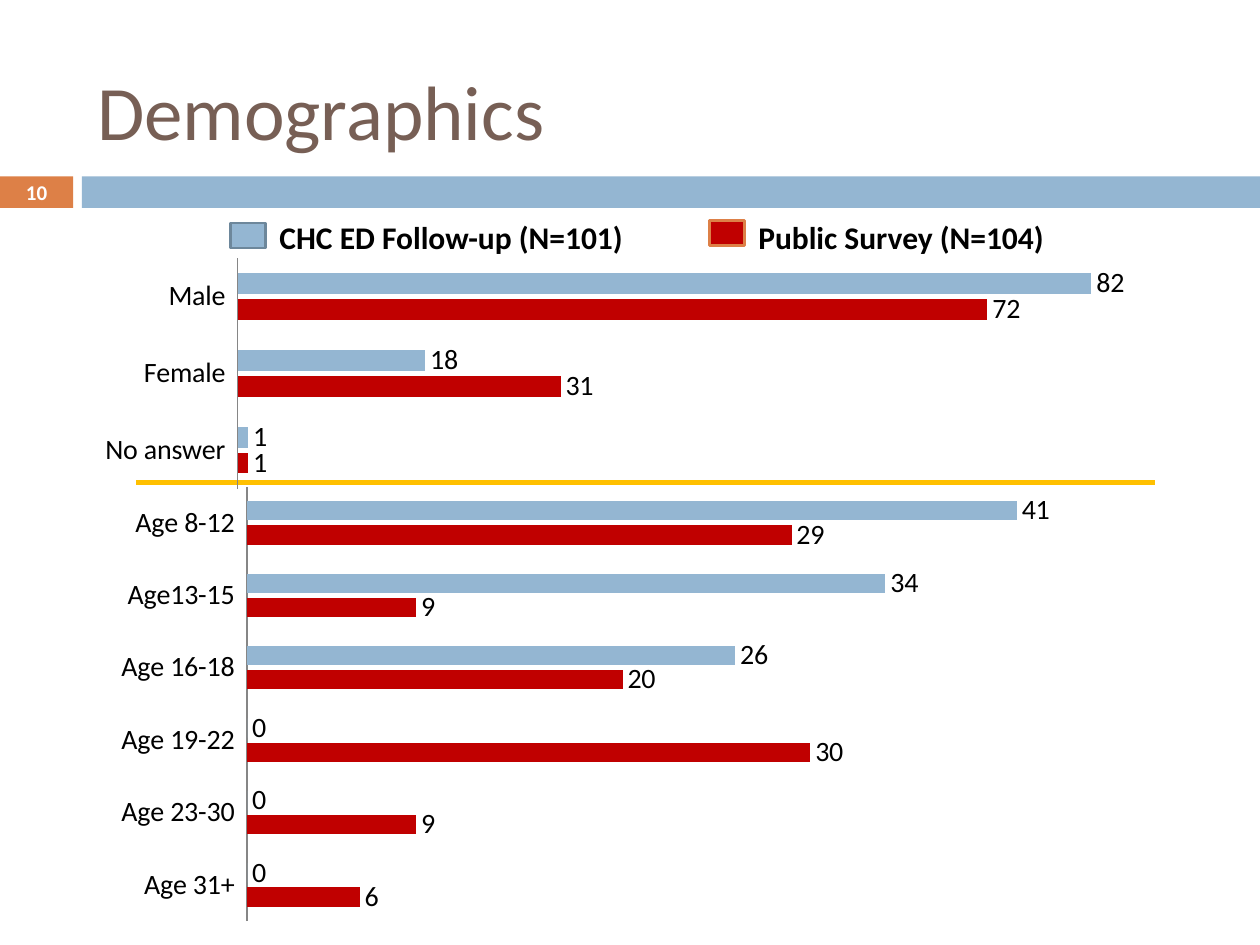
from lxml import etree
from pptx import Presentation
from pptx.chart.data import CategoryChartData
from pptx.dml.color import RGBColor
from pptx.enum.chart import XL_CHART_TYPE, XL_LABEL_POSITION, XL_TICK_LABEL_POSITION, XL_TICK_MARK
from pptx.enum.shapes import MSO_CONNECTOR, MSO_SHAPE
from pptx.enum.text import MSO_ANCHOR, PP_ALIGN
from pptx.oxml.ns import qn
from pptx.util import Inches, Pt

BAR_CLUSTERED = XL_CHART_TYPE.BAR_CLUSTERED
OUTSIDE_END = XL_LABEL_POSITION.OUTSIDE_END
LABELS_LOW = XL_TICK_LABEL_POSITION.LOW
NO_TICK = XL_TICK_MARK.NONE
STRAIGHT = MSO_CONNECTOR.STRAIGHT
RECTANGLE = MSO_SHAPE.RECTANGLE
MIDDLE = MSO_ANCHOR.MIDDLE
LEFT, CENTER = PP_ALIGN.LEFT, PP_ALIGN.CENTER

BLUE = RGBColor(0x94, 0xB6, 0xD2)
BLUE_EDGE = RGBColor(0x6D, 0x87, 0x9B)
RED = RGBColor(0xC0, 0x00, 0x00)
ORANGE = RGBColor(0xDD, 0x80, 0x47)
GOLD = RGBColor(0xFF, 0xC0, 0x00)
BROWN = RGBColor(0x77, 0x5F, 0x55)
GREY = RGBColor(0x86, 0x86, 0x86)
BLACK = RGBColor(0x00, 0x00, 0x00)
WHITE = RGBColor(0xFF, 0xFF, 0xFF)
FONT = "Calibri"
TITLE_ONLY = 5


def style_font(font, size, color, bold=False):
    font.name = FONT
    font.size = Pt(size)
    font.bold = bold
    font.color.rgb = color


def add_rectangle(slide, left, top, width, height, fill, edge=None):
    rectangle = slide.shapes.add_shape(
        RECTANGLE, Inches(left), Inches(top), Inches(width), Inches(height))
    rectangle.shadow.inherit = False
    rectangle.fill.solid()
    rectangle.fill.fore_color.rgb = fill
    if edge is None:
        rectangle.line.fill.background()
    else:
        rectangle.line.color.rgb = edge
        rectangle.line.width = Pt(1.5)
    return rectangle


def set_title(slide, text, left, top, width, height):
    title = slide.shapes.title
    title.left, title.top = Inches(left), Inches(top)
    title.width, title.height = Inches(width), Inches(height)
    frame = title.text_frame
    frame.text = text
    frame.vertical_anchor = MIDDLE
    frame.paragraphs[0].alignment = LEFT
    style_font(frame.paragraphs[0].runs[0].font, 44, BROWN)


def add_header_band(slide, number, top, height):
    """Draw the page number tab and the bar to its right."""
    tab = add_rectangle(slide, 0, top, 0.58, height, ORANGE)
    add_rectangle(slide, 0.65, top, 9.35, height, BLUE)
    frame = tab.text_frame
    frame.margin_top = frame.margin_bottom = 0
    frame.text = number
    frame.vertical_anchor = MIDDLE
    frame.paragraphs[0].alignment = CENTER
    style_font(frame.paragraphs[0].runs[0].font, 12, WHITE, bold=True)


def add_legend_entry(slide, text, left, top, swatch_top, fill, edge):
    add_rectangle(slide, left, swatch_top, 0.28, 0.2, fill, edge)
    label = slide.shapes.add_textbox(
        Inches(left + 0.29), Inches(top), Inches(3.5), Inches(0.4))
    frame = label.text_frame
    frame.word_wrap = True
    frame.text = text
    style_font(frame.paragraphs[0].runs[0].font, 18, BLACK, bold=True)


def add_divider(slide, left, right, y):
    divider = slide.shapes.add_connector(
        STRAIGHT, Inches(left), Inches(y), Inches(right), Inches(y))
    divider.line.color.rgb = GOLD
    divider.line.width = Pt(3)
    etree.SubElement(divider.element.spPr, qn("a:effectLst"))


def set_plot_layout(chart, x, y, w, h):
    """Fix the inner plot area, in fractions of the chart's size."""
    plot_area = chart.element.find(".//" + qn("c:plotArea"))
    for old_layout in plot_area.findall(qn("c:layout")):
        plot_area.remove(old_layout)
    layout = etree.Element(qn("c:layout"))
    manual = etree.SubElement(layout, qn("c:manualLayout"))
    settings = {"layoutTarget": "inner", "xMode": "edge", "yMode": "edge",
                "x": x, "y": y, "w": w, "h": h}
    for tag, value in settings.items():
        etree.SubElement(manual, qn("c:" + tag)).set("val", str(value))
    plot_area.insert(0, layout)


def add_survey_chart(slide, box, categories, follow_up, public, maximum, layout):
    data = CategoryChartData()
    data.categories = categories
    data.add_series("Series 1", follow_up)
    data.add_series("Series 2", public)
    chart = slide.shapes.add_chart(
        BAR_CLUSTERED, *(Inches(length) for length in box), data).chart
    chart.has_legend = False
    chart.has_title = False
    style_font(chart.font, 16, BLACK)
    set_plot_layout(chart, *layout)

    category_axis = chart.category_axis
    category_axis.reverse_order = True
    category_axis.major_tick_mark = NO_TICK
    category_axis.minor_tick_mark = NO_TICK
    category_axis.tick_label_position = LABELS_LOW
    category_axis.format.line.color.rgb = GREY
    value_axis = chart.value_axis
    value_axis.visible = False
    value_axis.has_major_gridlines = False
    value_axis.minimum_scale, value_axis.maximum_scale = 0, maximum

    plot = chart.plots[0]
    plot.vary_by_categories = False
    plot.gap_width = 150
    plot.overlap = -25
    for series, color in zip(plot.series, (BLUE, RED)):
        series.format.fill.solid()
        series.format.fill.fore_color.rgb = color
        labels = series.data_labels
        labels.show_value = True
        labels.position = OUTSIDE_END
        style_font(labels.font, 16, BLACK)


def main():
    presentation = Presentation()
    presentation.slide_width = Inches(10)
    presentation.slide_height = Inches(7.5)
    slide = presentation.slides.add_slide(presentation.slide_layouts[TITLE_ONLY])

    set_title(slide, "Demographics", 0.67, 0.33, 8.92, 1.08)
    add_header_band(slide, "10", 1.4, 0.25)
    add_divider(slide, 1.08, 9.17, 3.83)
    add_legend_entry(slide, "CHC ED Follow-up (N=101)", 1.83, 1.68, 1.77, BLUE, BLUE_EDGE)
    add_legend_entry(slide, "Public Survey (N=104)", 5.63, 1.68, 1.75, RED, ORANGE)
    add_survey_chart(
        slide, (0.75, 2.01, 8.75, 1.91), ("Male", "Female", "No answer"),
        (82, 18, 1), (72, 31, 1), 90, (0.13, 0.02, 0.85, 0.96))
    add_survey_chart(
        slide, (0.83, 3.75, 8.08, 3.75),
        ("Age 8-12", "Age13-15", "Age 16-18", "Age 19-22", "Age 23-30", "Age 31+"),
        (41, 34, 26, 0, 0, 0), (29, 9, 20, 30, 9, 6), 45, (0.14, 0.03, 0.83, 0.92))
    presentation.save("out.pptx")


if __name__ == "__main__":
    main()
